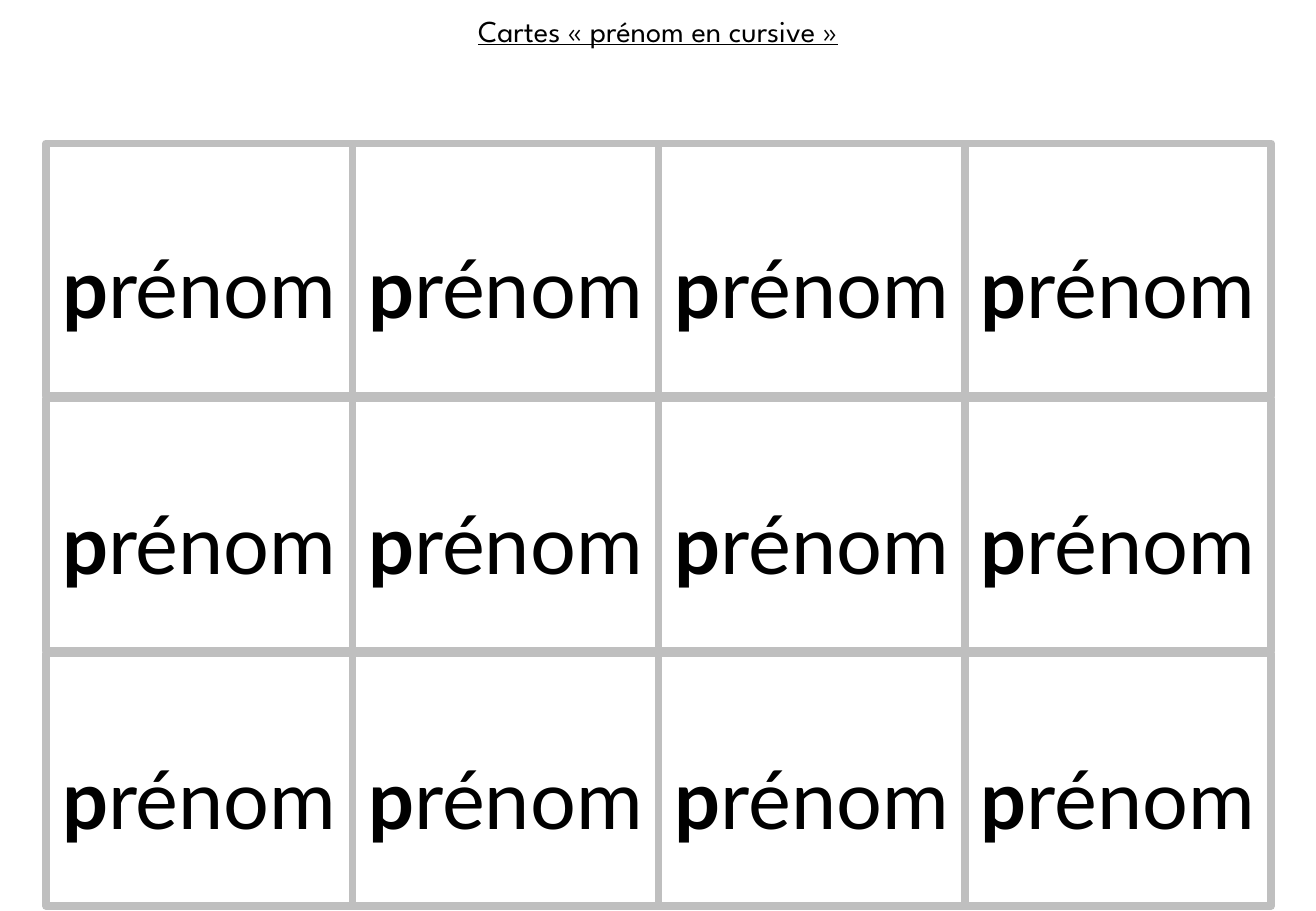
from pptx import Presentation
from pptx.dml.color import RGBColor
from pptx.enum.shapes import MSO_SHAPE
from pptx.enum.text import MSO_AUTO_SIZE, PP_ALIGN
from pptx.util import Inches, Pt

RECTANGLE = MSO_SHAPE.RECTANGLE
GROW = MSO_AUTO_SIZE.SHAPE_TO_FIT_TEXT
CENTER = PP_ALIGN.CENTER

BLACK = RGBColor(0x00, 0x00, 0x00)
GREY = RGBColor(0xBF, 0xBF, 0xBF)

SLIDE_WIDTH, SLIDE_HEIGHT = 10.83, 7.5
ROWS, COLUMNS = 3, 4
GRID_LEFT, GRID_TOP = 0.38, 1.18
CARD_WIDTH, CARD_HEIGHT = 2.52, 2.08
ROW_STEP = 2.1
NAME_OFFSET, NAME_HEIGHT = 0.33, 1.31


def add_centered_text(slide, left, top, width, height, parts, font_name, size):
    """Add a centred text box with one run per part and return its paragraph."""
    box = slide.shapes.add_textbox(Inches(left), Inches(top), Inches(width), Inches(height))
    text_frame = box.text_frame
    text_frame.word_wrap = True
    text_frame.auto_size = GROW
    paragraph = text_frame.paragraphs[0]
    paragraph.alignment = CENTER
    for part in parts:
        run = paragraph.add_run()
        run.text = part
        run.font.name = font_name
        run.font.size = Pt(size)
        run.font.color.rgb = BLACK
    return paragraph


def add_title(slide):
    """Add the underlined title across the top of the slide."""
    paragraph = add_centered_text(
        slide, 0, 0.05, SLIDE_WIDTH, 0.4,
        ["Cartes « prénom en cursive »"], "League Spartan", 18)
    paragraph.runs[0].font.underline = True


def add_card(slide, left, top):
    """Add a framed card holding the first name with a bold initial."""
    frame = slide.shapes.add_shape(
        RECTANGLE, Inches(left), Inches(top), Inches(CARD_WIDTH), Inches(CARD_HEIGHT))
    frame.shadow.inherit = False
    frame.fill.background()
    frame.line.color.rgb = GREY
    frame.line.width = Pt(4.5)

    paragraph = add_centered_text(
        slide, left, top + NAME_OFFSET, CARD_WIDTH, NAME_HEIGHT,
        ["p", "rénom"], "Lato", 48)
    paragraph.line_spacing = 1.5
    initial, ending = paragraph.runs
    initial.font.bold = True
    ending.font.bold = False


def main():
    """Build the slide of first-name cards and save it."""
    presentation = Presentation()
    presentation.slide_width = Inches(SLIDE_WIDTH)
    presentation.slide_height = Inches(SLIDE_HEIGHT)
    slide = presentation.slides.add_slide(presentation.slide_layouts[6])
    for row in range(ROWS):
        for column in range(COLUMNS):
            add_card(slide, GRID_LEFT + column * CARD_WIDTH, GRID_TOP + row * ROW_STEP)
    add_title(slide)
    presentation.save("out.pptx")


if __name__ == "__main__":
    main()
